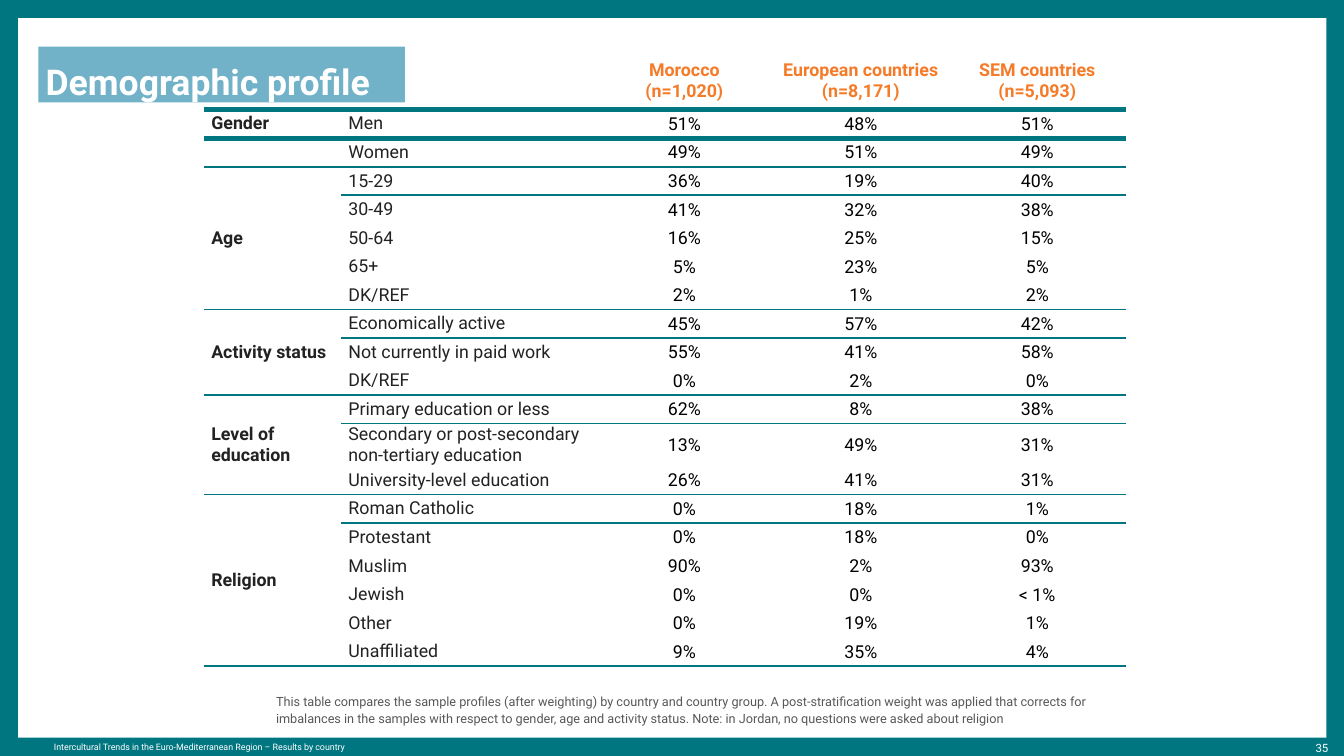
"""Builds the demographic profile slide: one table comparing Morocco with two country groups."""
from typing import NamedTuple

from lxml.etree import SubElement
from pptx import Presentation
from pptx.dml.color import RGBColor
from pptx.enum.shapes import MSO_SHAPE
from pptx.enum.text import MSO_ANCHOR as Anchor, MSO_AUTO_SIZE as AutoSize, PP_ALIGN as Align
from pptx.oxml import parse_xml
from pptx.oxml.ns import nsdecls, qn
from pptx.util import Pt

TEAL, BLUE, ORANGE, WHITE = "007681", "71B2C9", "F57B29", "FFFFFF"
INK, BLACK, GREY = "222223", "000000", "58585B"
NO_STYLE = "{2D5ABB26-0587-4C30-8999-92F81FD0307C}"


class Box(NamedTuple):
    left: float
    top: float
    width: float
    height: float

    def lengths(self) -> list:
        return [Pt(value) for value in self]


class Style(NamedTuple):
    size: float
    color: str
    bold: bool = False
    align: Align = Align.LEFT
    line_spacing: object = None


class Margins(NamedTuple):
    side: float
    top: float
    bottom: float


class Category(NamedTuple):
    label: str
    shares: tuple
    height: float = 22.5


class Topic(NamedTuple):
    name: str
    categories: list
    merged: bool = True


class Caption(NamedTuple):
    text: str
    box: Box
    style: Style
    anchor: Anchor
    wrap: bool = True


HEADING = Style(14, ORANGE, True, Align.CENTER)
TOPIC = Style(14, INK, True)
LABEL = Style(14, INK)
SHARE = Style(14, BLACK, False, Align.CENTER)
TITLE = Style(28, WHITE, True, Align.LEFT, Pt(41))

NONE = Margins(0, 0, 0)
WIDE = Margins(5.76, 2.88, 2.88)
FLAT = Margins(5.76, 0, 0)
TIGHT = Margins(0.72, 0.72, 0)

COLUMN_WIDTHS = [108, 200.88, 138.96, 138.96, 138.96]
HEADER_HEIGHT = 45.36
HEADINGS = [["Morocco", "(n=1,020)"], ["European countries (n=8,171)"], ["SEM countries (n=5,093)"]]
TOPICS = [
    Topic("Gender", [
        Category("Men", ("51%", "48%", "51%")),
        Category("Women", ("49%", "51%", "49%")),
    ], merged=False),
    Topic("Age", [
        Category("15-29", ("36%", "19%", "40%")),
        Category("30-49", ("41%", "32%", "38%")),
        Category("50-64", ("16%", "25%", "15%")),
        Category("65+", ("5%", "23%", "5%")),
        Category("DK/REF", ("2%", "1%", "2%")),
    ]),
    Topic("Activity status", [
        Category("Economically active", ("45%", "57%", "42%")),
        Category("Not currently in paid work", ("55%", "41%", "58%")),
        Category("DK/REF", ("0%", "2%", "0%")),
    ]),
    Topic("Level of education", [
        Category("Primary education or less", ("62%", "8%", "38%")),
        Category("Secondary or post-secondary non-tertiary education", ("13%", "49%", "31%"), 33.5),
        Category("University-level education", ("26%", "41%", "31%")),
    ]),
    Topic("Religion", [
        Category("Roman Catholic", ("0%", "18%", "1%")),
        Category("Protestant", ("0%", "18%", "0%")),
        Category("Muslim", ("90%", "2%", "93%")),
        Category("Jewish", ("0%", "0%", "< 1%")),
        Category("Other", ("0%", "19%", "1%")),
        Category("Unaffiliated", ("9%", "35%", "4%")),
    ]),
]
CAPTIONS = [
    Caption("35", Box(1012.3, 582.5, 33.8, 12.2),
            Style(9, WHITE, align=Align.RIGHT, line_spacing=1.1), Anchor.TOP),
    Caption("Intercultural Trends in the Euro-Mediterranean Region – Results by country",
            Box(42.5, 581, 385, 14.4), Style(7, WHITE), Anchor.MIDDLE, wrap=False),
    Caption("This table compares the sample profiles (after weighting) by country and country group. "
            "A post-stratification weight was applied that corrects for imbalances in the samples with "
            "respect to gender, age and activity status. Note: in Jordan, no questions were asked about "
            "religion", Box(217.4, 513.4, 646.6, 58.3), Style(10, GREY, line_spacing=1.1), Anchor.BOTTOM),
]


def paint(target, color: str) -> None:
    target.rgb = RGBColor.from_string(color)


def fill_solid(fill, color: str) -> None:
    fill.solid()
    paint(fill.fore_color, color)


def write(frame, lines: list, style: Style) -> None:
    for index, line in enumerate(lines):
        paragraph = frame.add_paragraph() if index else frame.paragraphs[0]
        paragraph.alignment = style.align
        if style.line_spacing:
            paragraph.line_spacing = style.line_spacing
        run = paragraph.add_run()
        run.text = line
        run.font.name, run.font.size, run.font.bold = "Roboto", Pt(style.size), style.bold
        paint(run.font.color, style.color)


def set_margins(target, margins: Margins) -> None:
    target.margin_left = target.margin_right = Pt(margins.side)
    target.margin_top, target.margin_bottom = Pt(margins.top), Pt(margins.bottom)


def fill_cell(cell, lines: list, style: Style, margins: Margins) -> None:
    set_margins(cell, margins)
    cell.vertical_anchor = Anchor.MIDDLE
    write(cell.text_frame, lines, style)


def add_rule(cell, side: str, width: float) -> None:
    properties = cell._tc.get_or_add_tcPr()
    line = parse_xml(f'<a:{side} {nsdecls("a")} w="{Pt(width)}"/>')
    SubElement(SubElement(line, qn("a:solidFill")), qn("a:srgbClr"), val=TEAL)
    properties.insert(len(properties.findall(qn("a:lnT"))), line)


def rule_below(table, row: int, width: float) -> None:
    for column in range(len(COLUMN_WIDTHS)):
        add_rule(table.cell(row, column), "lnB", width)
        if row + 1 < len(table.rows):
            add_rule(table.cell(row + 1, column), "lnT", width)


def add_profile_table(slide) -> None:
    heights = [HEADER_HEIGHT] + [item.height for topic in TOPICS for item in topic.categories]
    box = Box(160.6, 41, sum(COLUMN_WIDTHS), sum(heights))
    graphic = slide.shapes.add_table(len(heights), len(COLUMN_WIDTHS), *box.lengths())
    graphic.element.find(f".//{qn('a:tableStyleId')}").text = NO_STYLE
    table = graphic.table
    table.first_row = table.horz_banding = False
    for column, width in zip(table.columns, COLUMN_WIDTHS):
        column.width = Pt(width)
    for row, height in zip(table.rows, heights):
        row.height = Pt(height)
    for cell in table.iter_cells():
        cell.fill.background()
        set_margins(cell, NONE)

    for column, lines in enumerate(HEADINGS, 2):
        fill_cell(table.cell(0, column), lines, HEADING, TIGHT)
    rule_below(table, 0, 4.5)
    first = 1
    for topic in TOPICS:
        last = first + len(topic.categories) - 1
        for row, category in enumerate(topic.categories, first):
            fill_cell(table.cell(row, 1), [category.label], LABEL, WIDE if category.height < 30 else FLAT)
            for column, share in enumerate(category.shares, 2):
                fill_cell(table.cell(row, column), [share], SHARE, TIGHT)
        topic_cell = table.cell(first, 0)
        fill_cell(topic_cell, [topic.name], TOPIC, WIDE)
        rule_below(table, last, 1.5)
        if topic.merged:
            topic_cell.merge(table.cell(last, 0))
            add_rule(topic_cell, "lnB", 1.5)
        first = last + 1


def add_caption(slide, caption: Caption) -> None:
    frame = slide.shapes.add_textbox(*caption.box.lengths()).text_frame
    frame.word_wrap, frame.vertical_anchor = caption.wrap, caption.anchor
    set_margins(frame, NONE)
    write(frame, [caption.text], caption.style)


def add_title(slide) -> None:
    title = slide.shapes.title
    title.left, title.top, title.width, title.height = Box(30.2, 36.7, 288.7, 43.9).lengths()
    fill_solid(title.fill, BLUE)
    frame = title.text_frame
    frame.auto_size, frame.vertical_anchor, frame.word_wrap = AutoSize.NONE, Anchor.BOTTOM, True
    set_margins(frame, Margins(5.76, 2.88, 0))
    write(frame, ["Demographic profile"], TITLE)


def main() -> None:
    deck = Presentation()
    deck.slide_width, deck.slide_height = Pt(1058.4), Pt(595.44)
    slide = deck.slides.add_slide(deck.slide_layouts[5])
    fill_solid(slide.background.fill, TEAL)
    panel = slide.shapes.add_shape(MSO_SHAPE.RECTANGLE, *Box(14.2, 14.2, 1030.3, 566.8).lengths())
    panel.shadow.inherit = False
    fill_solid(panel.fill, WHITE)
    panel.line.fill.background()
    slide.shapes.element.insert(2, panel.element)
    add_title(slide)
    add_profile_table(slide)
    for caption in CAPTIONS:
        add_caption(slide, caption)
    deck.save("out.pptx")


if __name__ == "__main__":
    main()
